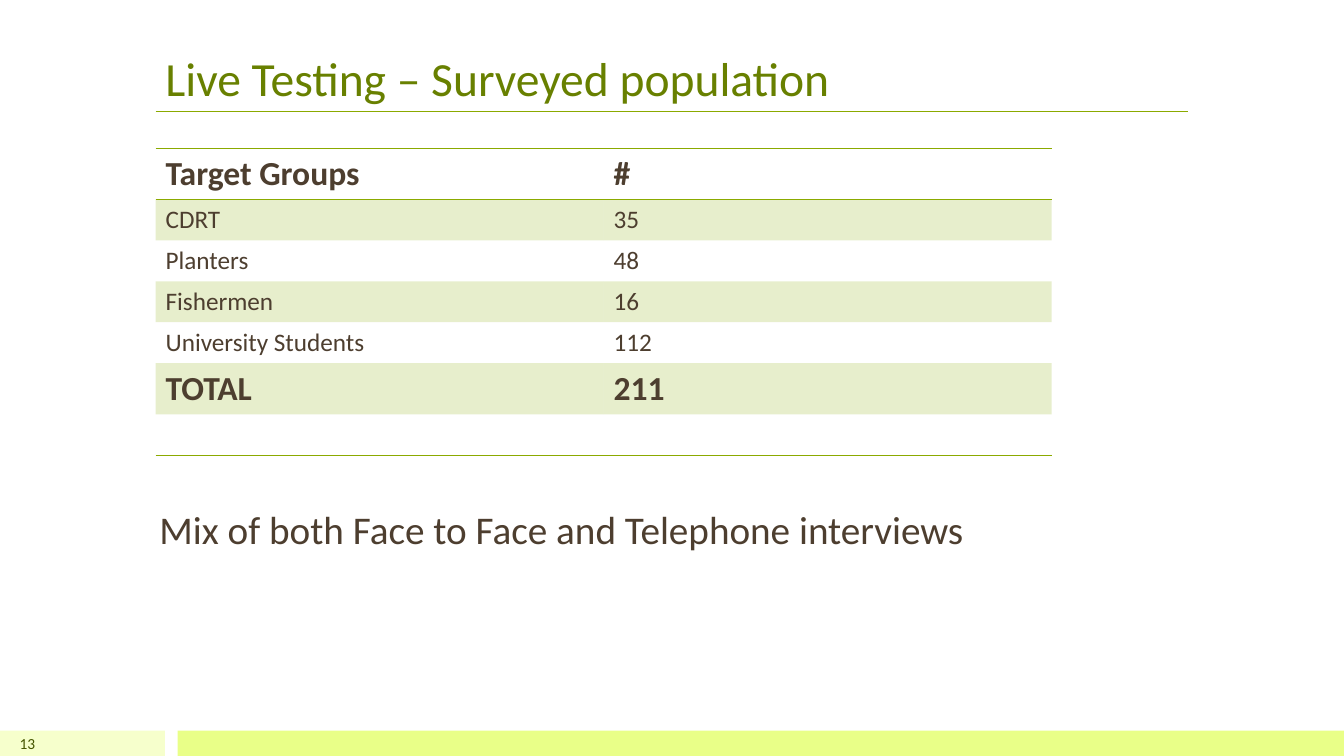
import pptx
import pptx.util
import pptx.dml.color
import pptx.enum.shapes
import pptx.enum.text
import pptx.oxml
import pptx.oxml.ns

Cm = pptx.util.Cm
Pt = pptx.util.Pt
RGBColor = pptx.dml.color.RGBColor
Anchor = pptx.enum.text.MSO_ANCHOR
Align = pptx.enum.text.PP_ALIGN
qn = pptx.oxml.ns.qn

TITLE = "Live Testing – Surveyed population"
NOTE = "Mix of both Face to Face and Telephone interviews"
PAGE = "13"
ROWS = [
    ("Target Groups", "#"),
    ("CDRT", "35"),
    ("Planters", "48"),
    ("Fishermen", "16"),
    ("University Students", "112"),
    ("TOTAL", "211"),
    ("", ""),
]
BOLD = (0, 5)
RULES = {0: ("lnT", "lnB"), 6: ("lnB",)}

FONT = "Calibri"
PALE = RGBColor(0xF6, 0xFF, 0xCC)
LIME = RGBColor(0xE9, 0xFF, 0x88)
GREEN = RGBColor(0x8B, 0xAA, 0x00)
OLIVE = RGBColor(0x68, 0x80, 0x00)
DARK = RGBColor(0x45, 0x55, 0x00)
BROWN = RGBColor(0x4D, 0x3E, 0x2F)
PLAIN = "{2D5ABB26-0587-4C30-8999-92F81FD0307C}"

WIDE, HIGH = 33.87, 19.05
LEFT, RIGHT = 3.92, 29.95
FOOT = 0.64
BASE = HIGH - FOOT


def style(para, size, color, bold=False):
    font = para.font
    font.name, font.size, font.bold = FONT, Pt(size), bold
    font.color.rgb = color


def write(slide, text, box, size, color, anchor=Anchor.TOP, align=Align.LEFT, wrap=True):
    frame = slide.shapes.add_textbox(*map(Cm, box)).text_frame
    frame.word_wrap = wrap
    frame.vertical_anchor = anchor
    para = frame.paragraphs[0]
    para.text = text
    para.alignment = align
    style(para, size, color)


def bar(slide, left, width, color):
    shape = slide.shapes.add_shape(
        pptx.enum.shapes.MSO_SHAPE.RECTANGLE, Cm(left), Cm(BASE), Cm(width), Cm(FOOT))
    shape.shadow.inherit = False
    shape.fill.solid()
    shape.fill.fore_color.rgb = color
    shape.line.fill.background()


def border(cell, side):
    cell._tc.get_or_add_tcPr().append(pptx.oxml.parse_xml(
        f'<a:{side} xmlns:a="http://schemas.openxmlformats.org/drawingml/2006/main" w="12700">'
        f'<a:solidFill><a:srgbClr val="{GREEN}"/></a:solidFill></a:{side}>'))


def tint(cell):
    cell.fill.solid()
    cell.fill.fore_color.rgb = GREEN
    color = next(cell._tc.tcPr.find(qn("a:solidFill")).iter(qn("a:srgbClr")))
    color.append(color.makeelement(qn("a:alpha"), {"val": "20000"}))


def grid(slide):
    tall = [1.29 if row in BOLD else 1.03 for row in range(len(ROWS))]
    table = slide.shapes.add_table(
        len(ROWS), 2, Cm(LEFT), Cm(3.74), Cm(22.58), Cm(sum(tall))).table
    table.first_row = table.horz_banding = False
    next(table._tbl.iter(qn("a:tableStyleId"))).text = PLAIN
    for row, texts in enumerate(ROWS):
        table.rows[row].height = Cm(tall[row])
        for col, text in enumerate(texts):
            cell = table.cell(row, col)
            cell.text = text
            bold = row in BOLD
            style(cell.text_frame.paragraphs[0], 24 if bold else 18, BROWN, bold)
            for side in RULES.get(row, ()):
                border(cell, side)
            if row % 2:
                tint(cell)
            else:
                cell.fill.background()


def main():
    deck = pptx.Presentation()
    deck.slide_width, deck.slide_height = Cm(WIDE), Cm(HIGH)
    slide = deck.slides.add_slide(deck.slide_layouts[6])
    bar(slide, 0, 4.16, PALE)
    bar(slide, 4.48, WIDE - 4.48, LIME)
    rule = slide.shapes.add_connector(
        pptx.enum.shapes.MSO_CONNECTOR.STRAIGHT, Cm(LEFT), Cm(2.8), Cm(RIGHT), Cm(2.8))
    rule.line.color.rgb = GREEN
    rule.line.width = Pt(0.5)
    props = rule._element.spPr
    props.append(props.makeelement(qn("a:effectLst"), {}))
    write(slide, TITLE, (LEFT, 0.32, RIGHT - LEFT, 2.48), 34, OLIVE, Anchor.BOTTOM)
    write(slide, PAGE, (0, BASE, 1.14, FOOT), 11, DARK, Anchor.MIDDLE, Align.RIGHT)
    grid(slide)
    write(slide, NOTE, (3.77, 12.62, 21.16, 1.45), 28, BROWN, wrap=False)
    deck.save("out.pptx")


if __name__ == "__main__":
    main()
